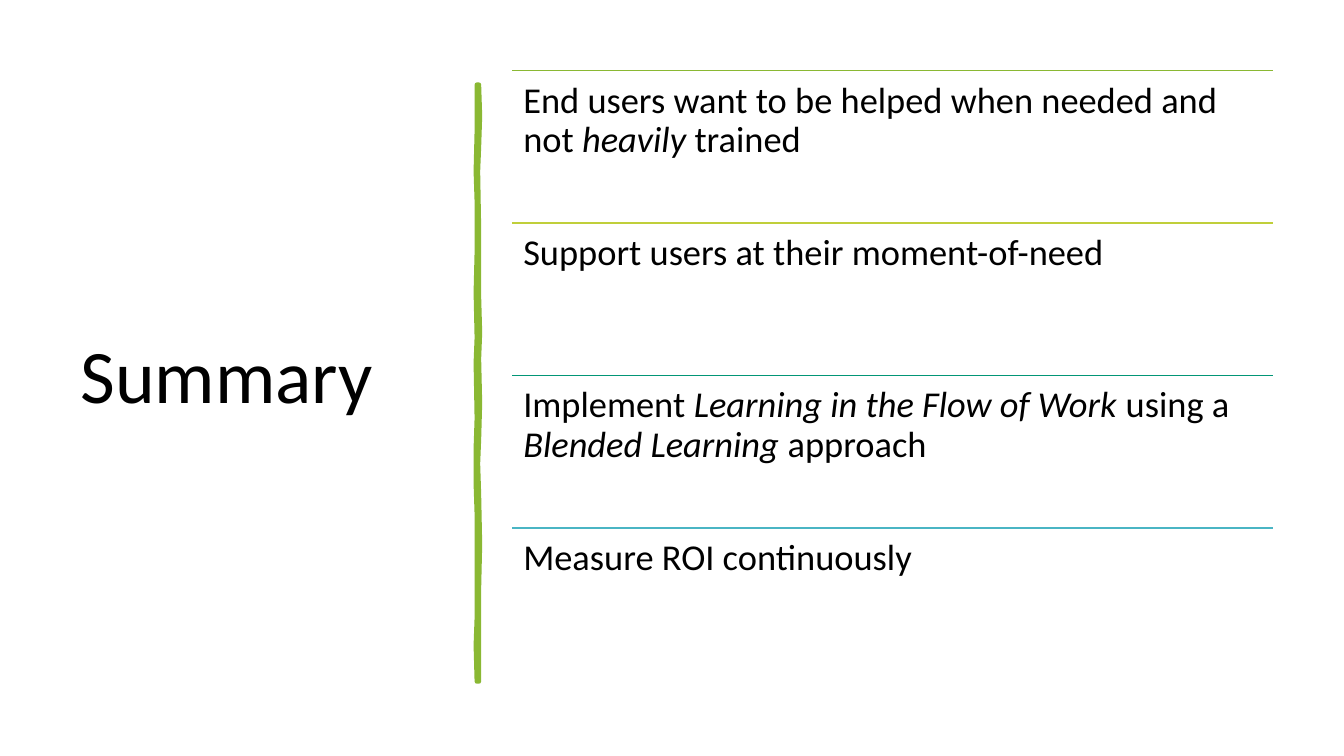
from lxml import etree
from pptx import Presentation, util as u
from pptx.dml.color import RGBColor
from pptx.enum import shapes, text
from pptx.oxml.ns import qn

WIDTH, HEIGHT = 13.33, 7.5
GREEN = "8AB833"
POINTS = [
    ("8AB833", [("End users want to be helped when needed and not ", False),
                ("heavily ", True), ("trained", False)]),
    ("C0CF3A", [("Support users at their moment-of-need", False)]),
    ("029676", [("Implement ", False), ("Learning in the Flow of Work ", True),
                ("using a ", False), ("Blended Learning ", True), ("approach", False)]),
    ("4AB5C4", [("Measure ROI continuously", False)]),
]
RIGHT_EDGE = [(4.75, 0.84), (4.76, 1.15), (4.75, 1.46), (4.74, 1.7), (4.75, 2.26),
              (4.75, 2.94), (4.76, 3.3), (4.75, 3.56), (4.76, 4.0), (4.75, 4.36),
              (4.74, 4.6), (4.75, 4.9), (4.76, 5.4), (4.75, 5.84), (4.75, 6.76)]
LEFT_EDGE = [(4.73, 6.76), (4.72, 6.4), (4.73, 6.13), (4.73, 5.57), (4.73, 5.1),
             (4.72, 4.8), (4.72, 4.45), (4.73, 4.15), (4.72, 3.6), (4.73, 3.35),
             (4.72, 2.9), (4.73, 2.5), (4.73, 2.0), (4.72, 1.7), (4.73, 1.3),
             (4.73, 0.84)]


def colour(value):
    return RGBColor.from_string(value)


def add_text(holder, runs, size, inset, frame_format, paragraph_format):
    frame = holder.text_frame
    margins = {f"margin_{side}": u.Inches(inset) for side in ("left", "top", "right", "bottom")}
    for name, value in {"word_wrap": True, **margins, **frame_format}.items():
        setattr(frame, name, value)
    paragraph = frame.paragraphs[0]
    alignment = {"line_spacing": 0.9, "alignment": text.PP_ALIGN.LEFT}
    for name, value in {**alignment, **paragraph_format}.items():
        setattr(paragraph, name, value)
    for wording, italic in runs:
        run = paragraph.add_run()
        run.text = wording
        run.font.color.rgb = colour("000000")
        for name, value in {"name": "Calibri", "size": u.Pt(size), "italic": italic}.items():
            setattr(run.font, name, value)


def add_title(slide, box):
    title = slide.shapes.add_textbox(*map(u.Inches, box))
    add_text(title, [("Summary", False)], 54, 0.1,
             {"vertical_anchor": text.MSO_ANCHOR.MIDDLE}, {})


def add_divider(slide, edges):
    start, *rest = [(u.Inches(x), u.Inches(y)) for x, y in edges]
    builder = slide.shapes.build_freeform(*start)
    builder.add_line_segments(rest, close=True)
    divider = builder.convert_to_shape()
    divider.shadow.inherit = False
    divider.fill.solid()
    divider.fill.fore_color.rgb = colour(GREEN)
    divider.line.color.rgb = colour(GREEN)
    divider.line.width = u.Pt(3.25)


def add_points(slide, box):
    left, top, width, height = box
    row_height = height / len(POINTS)
    for row, (rule_colour, runs) in enumerate(POINTS):
        y = top + row * row_height
        rule = slide.shapes.add_connector(
            shapes.MSO_CONNECTOR.STRAIGHT, *map(u.Inches, (left, y, left + width, y)))
        rule.line.color.rgb = colour(rule_colour)
        rule.line.width = u.Pt(1)
        etree.SubElement(rule.element.spPr, qn("a:effectLst"))
        point = slide.shapes.add_shape(
            shapes.MSO_SHAPE.RECTANGLE, *map(u.Inches, (left, y, width, row_height)))
        point.shadow.inherit = False
        point.fill.background()
        point.line.fill.background()
        add_text(point, runs, 26, 0.11,
                 {"vertical_anchor": text.MSO_ANCHOR.TOP}, {"space_after": u.Pt(9)})


def main():
    deck = Presentation()
    deck.slide_width, deck.slide_height = u.Inches(WIDTH), u.Inches(HEIGHT)
    slide = deck.slides.add_slide(deck.slide_layouts[6])
    add_title(slide, (0.7, 0.7, 0.28 * WIDTH, 6.11))
    add_divider(slide, RIGHT_EDGE + LEFT_EDGE)
    add_points(slide, (5.08, 0.7, 7.55, 6.05))
    deck.save("out.pptx")


if __name__ == "__main__":
    main()
